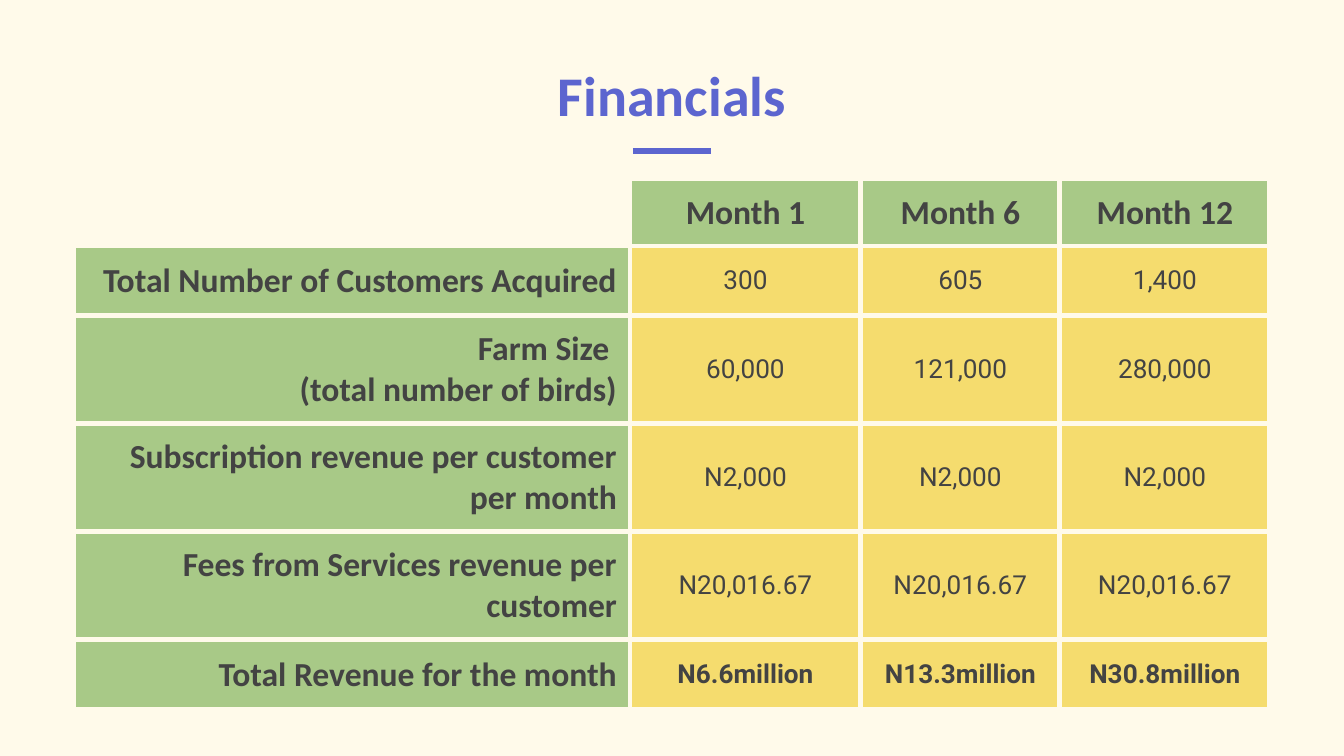
from lxml import etree
from pptx import Presentation
from pptx.dml.color import RGBColor
from pptx.enum.shapes import MSO_CONNECTOR
from pptx.enum.text import MSO_ANCHOR, PP_ALIGN
from pptx.oxml.ns import qn
from pptx.util import Emu, Pt

STRAIGHT = MSO_CONNECTOR.STRAIGHT
MIDDLE, BOTTOM = MSO_ANCHOR.MIDDLE, MSO_ANCHOR.BOTTOM
CENTER, RIGHT = PP_ALIGN.CENTER, PP_ALIGN.RIGHT

EMU_PER_PX = 914400 / 134.4
INSET = 13
CREAM, BLUE, GREEN, YELLOW, GRAY = "FFFAEA", "5C65CF", "A8C987", "F5DC6E", "434343"

COLUMN_WIDTHS = [556, 231, 199, 210]
ROW_HEIGHTS = [66, 70, 102, 102, 102, 70]
ROWS = [
    ["", "Month 1", "Month 6", "Month 12"],
    ["Total Number of Customers Acquired", "300", "605", "1,400"],
    ["Farm Size \n(total number of birds)", "60,000", "121,000", "280,000"],
    ["Subscription revenue per customer per month", "N2,000", "N2,000", "N2,000"],
    ["Fees from Services revenue per customer", "N20,016.67", "N20,016.67", "N20,016.67"],
    ["Total Revenue for the month", "N6.6million", "N13.3million", "N30.8million"],
]


def px(length):
    """Turn whole pixels into EMU."""
    return Emu(round(length * EMU_PER_PX))


def color(value):
    """Turn a hex string into a colour."""
    return RGBColor.from_string(value)


def write(frame, text, size=18, font="Calibri", fill=GRAY, bold=True, align=CENTER):
    """Write one formatted paragraph, with a line break at each newline."""
    frame.word_wrap = True
    para = frame.paragraphs[0]
    para.alignment = align
    para.font.size = Pt(size)
    for index, line in enumerate(text.split("\n")):
        if index:
            para.add_line_break()
        span = para.add_run()
        span.text = line
        span.font.size = Pt(size)
        span.font.name = font
        span.font.bold = bold
        span.font.color.rgb = color(fill)


def set_insets(holder):
    """Give a text frame or cell equal margins on all sides."""
    holder.margin_left = holder.margin_right = px(INSET)
    holder.margin_top = holder.margin_bottom = px(INSET)


def add_title(page, text):
    """Place and fill the title placeholder."""
    title = page.shapes.title
    title.left, title.top, title.width, title.height = map(px, (117, 30, 1110, 111))
    frame = title.text_frame
    frame.vertical_anchor = BOTTOM
    set_insets(frame)
    write(frame, text, size=30, fill=BLUE)


def add_rule(page, left, right, top):
    """Draw the short horizontal rule under the title."""
    rule = page.shapes.add_connector(STRAIGHT, px(left), px(top), px(right), px(top))
    rule.line.color.rgb = color(BLUE)
    rule.line.width = Pt(3)
    etree.SubElement(rule._element.spPr, qn("a:effectLst"))


def set_borders(cell, value, width):
    """Draw all four borders of a cell in one colour."""
    properties = cell._tc.get_or_add_tcPr()
    for index, side in enumerate(("lnL", "lnR", "lnT", "lnB")):
        border = etree.Element(qn(f"a:{side}"), w=str(Pt(width)))
        fill = etree.SubElement(border, qn("a:solidFill"))
        etree.SubElement(fill, qn("a:srgbClr"), val=value)
        properties.insert(index, border)


def format_cell(cell, text, row, column):
    """Fill one cell as a corner, a heading or a value."""
    cell.vertical_anchor = MIDDLE
    set_insets(cell)
    is_heading = row == 0 or column == 0
    if text:
        cell.fill.solid()
        cell.fill.fore_color.rgb = color(GREEN if is_heading else YELLOW)
    else:
        cell.fill.background()
    if is_heading:
        write(cell.text_frame, text, align=CENTER if row == 0 else RIGHT)
    else:
        is_total = row == len(ROWS) - 1
        write(cell.text_frame, text, size=14, font="Roboto", bold=is_total)
    set_borders(cell, CREAM, 3)


def add_financials_table(page, left, top):
    """Add the table of monthly figures."""
    frame = page.shapes.add_table(
        len(ROWS), len(COLUMN_WIDTHS), px(left), px(top),
        px(sum(COLUMN_WIDTHS)), px(sum(ROW_HEIGHTS)),
    )
    table = frame.table
    table.first_row = table.horz_banding = False
    for column, width in zip(table.columns, COLUMN_WIDTHS):
        column.width = px(width)
    for row, height in zip(table.rows, ROW_HEIGHTS):
        row.height = px(height)
    for row, texts in enumerate(ROWS):
        for column, text in enumerate(texts):
            format_cell(table.cell(row, column), text, row, column)


def main():
    """Build the financials slide."""
    deck = Presentation()
    deck.slide_width, deck.slide_height = px(1344), px(756)
    page = deck.slides.add_slide(deck.slide_layouts[5])
    page.background.fill.solid()
    page.background.fill.fore_color.rgb = color(CREAM)
    add_rule(page, 633, 711, 151)
    add_title(page, "Financials")
    add_financials_table(page, 74, 179)
    deck.save("out.pptx")


if __name__ == "__main__":
    main()
